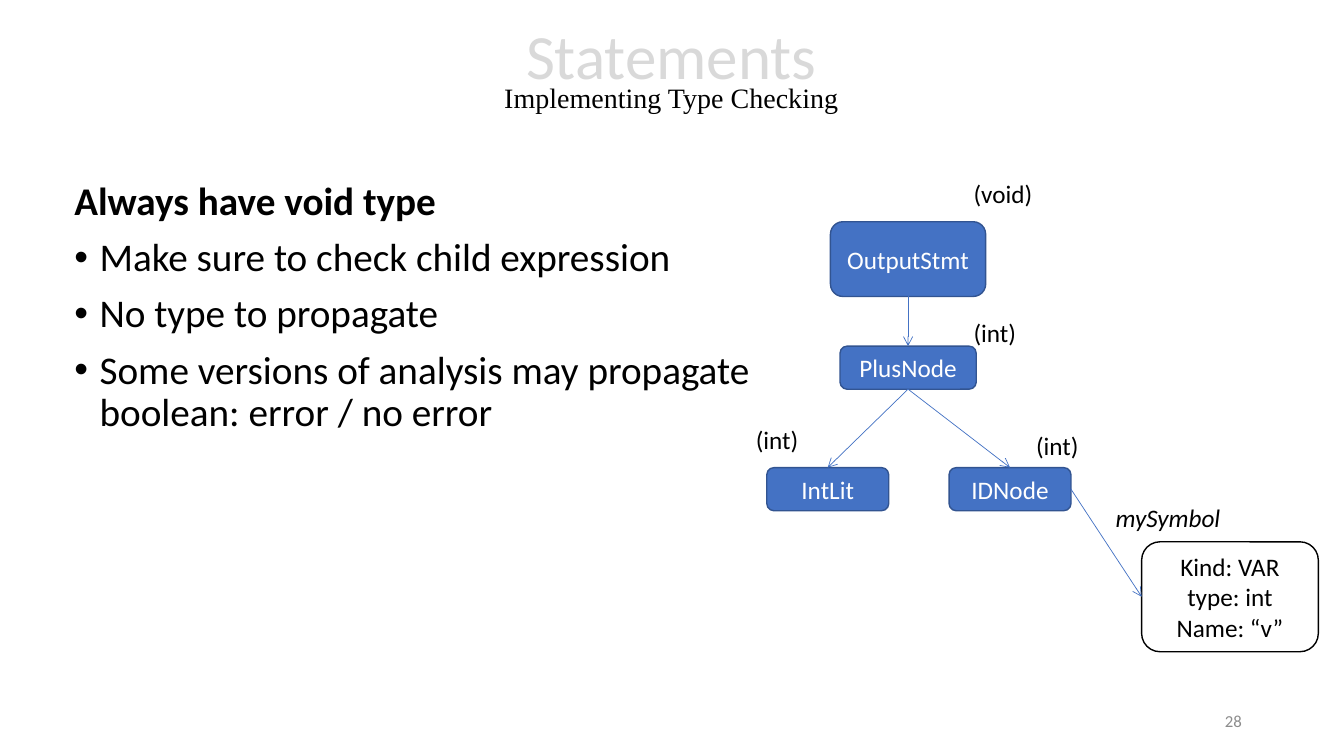
from lxml import etree
from pptx import Presentation
from pptx.dml.color import RGBColor
from pptx.enum.shapes import MSO_CONNECTOR, MSO_SHAPE
from pptx.enum.text import MSO_ANCHOR, PP_ALIGN
from pptx.oxml.ns import qn
from pptx.util import Pt

ROUND = MSO_SHAPE.ROUNDED_RECTANGLE
STRAIGHT = MSO_CONNECTOR.STRAIGHT
TOP, MIDDLE = MSO_ANCHOR.TOP, MSO_ANCHOR.MIDDLE
LEFT, CENTER, RIGHT = PP_ALIGN.LEFT, PP_ALIGN.CENTER, PP_ALIGN.RIGHT
# Connection sites of a rounded rectangle
N, W, S, E = range(4)
BLACK, WHITE, BLUE, NAVY = "000000", "FFFFFF", "4472C4", "325491"


def color(code):
    return RGBColor.from_string(code)


def apply(item, values):
    for name, value in values.items():
        setattr(item, name, value)


class Board:
    font = {"name": "Calibri", "size": Pt(18)}

    def __init__(self, slide):
        self.shapes = slide.shapes

    def run(self, para, text, ink=BLACK, **extra):
        run = para.add_run()
        run.text = text
        apply(run.font, self.font | extra)
        run.font.color.rgb = color(ink)

    def frame(self, left, top, width, height, anchor=TOP, wrap=True):
        box = self.shapes.add_textbox(Pt(left), Pt(top), Pt(width), Pt(height))
        apply(box.text_frame, {"word_wrap": wrap, "vertical_anchor": anchor})
        return box.text_frame

    def label(self, text, left, top, width, **extra):
        frame = self.frame(left, top, width, 29, wrap=False)
        self.run(frame.paragraphs[0], text, **extra)

    def node(self, lines, left, top, width, height, fill=BLUE, edge=NAVY, ink=WHITE):
        node = self.shapes.add_shape(ROUND, Pt(left), Pt(top), Pt(width), Pt(height))
        node.shadow.inherit = False
        node.fill.solid()
        node.fill.fore_color.rgb = color(fill)
        node.line.color.rgb = color(edge)
        node.line.width = Pt(1)
        frame = node.text_frame
        frame.vertical_anchor = MIDDLE
        for i, line in enumerate(lines):
            para = frame.add_paragraph() if i else frame.paragraphs[0]
            para.alignment = CENTER
            self.run(para, line, ink)
        return node

    def arrow(self, start, exit, end, entry):
        link = self.shapes.add_connector(STRAIGHT, 0, 0, 0, 0)
        link.begin_connect(start, exit)
        link.end_connect(end, entry)
        link.line.color.rgb = color(BLUE)
        link.line.width = Pt(0.5)
        tip = etree.SubElement(link.line._get_or_add_ln(), qn("a:tailEnd"))
        tip.set("type", "arrow")
        etree.SubElement(link._element.spPr, qn("a:effectLst"))

    def title(self, head, sub):
        para = self.frame(169.2, 1.4, 620.6, 104.4, MIDDLE).paragraphs[0]
        apply(para, {"alignment": CENTER, "line_spacing": 0.7})
        self.run(para, head, "D9D9D9", size=Pt(45))
        para.add_line_break()
        self.run(para, sub, name="Times New Roman", size=Pt(20))

    def body(self, head, items):
        frame = self.frame(46.1, 126, 506.9, 356.4)
        for i, text in enumerate([head, *items]):
            para = frame.add_paragraph() if i else frame.paragraphs[0]
            apply(para, {"alignment": LEFT, "line_spacing": 0.9, "space_before": Pt(10)})
            self.run(para, text, size=Pt(28), bold=not i)
            if i:
                props = para._p.get_or_add_pPr()
                props.set("marL", str(Pt(18)))
                props.set("indent", str(-Pt(18)))
                etree.SubElement(props, qn("a:buFont")).set("typeface", "Arial")
                etree.SubElement(props, qn("a:buChar")).set("char", "•")

    def number(self, text):
        para = self.frame(678.2, 500.4, 216, 28.8, MIDDLE).paragraphs[0]
        para.alignment = RIGHT
        self.run(para, text, "8C8C8C", size=Pt(12))


def main():
    deck = Presentation()
    apply(deck, {"slide_width": Pt(960), "slide_height": Pt(540)})
    board = Board(deck.slides.add_slide(deck.slide_layouts[6]))

    board.title("Statements", "Implementing Type Checking")
    board.body("Always have void type", [
        "Make sure to check child expression",
        "No type to propagate",
        "Some versions of analysis may propagate boolean: error / no error",
    ])
    board.number("28")

    output = board.node(["OutputStmt"], 593.2, 158.4, 110.9, 53.4)
    plus = board.node(["PlusNode"], 600, 247.2, 97.3, 30.8)
    lit, ident = [board.node([name], left, 334, 87.1, 30.8)
                  for name, left in (("IntLit", 547.7), ("IDNode", 677.9))]
    symbol = board.node(["Kind: VAR", "type: int", "Name: “v”"],
                        815.5, 387, 126.2, 78.5, WHITE, BLACK, BLACK)

    for link in ((output, S, plus, N), (plus, S, lit, N),
                 (plus, S, ident, N), (ident, E, symbol, W)):
        board.arrow(*link)

    board.label("mySymbol", 789.8, 355, 90, italic=True)
    board.label("(void)", 688.3, 123.8, 56.9)
    for left, top in ((688.3, 223.2), (532.8, 299.5), (733, 303.8)):
        board.label("(int)", left, top, 45.4)

    deck.save("out.pptx")


if __name__ == "__main__":
    main()
